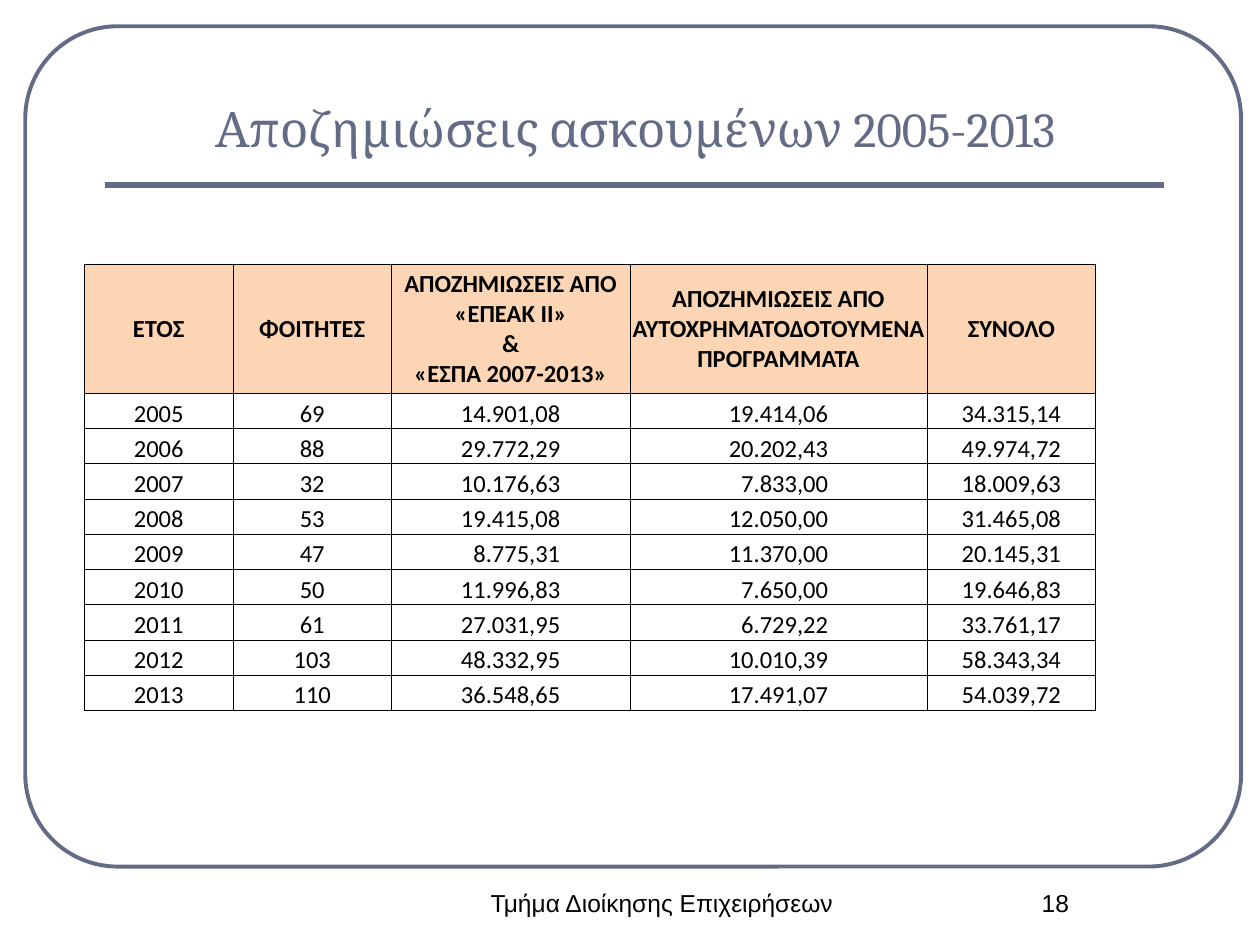
"""Build the slide on trainee compensation for 2005-2013."""
from dataclasses import dataclass

from lxml.etree import SubElement
from pptx import Presentation
from pptx.dml.color import RGBColor
from pptx.enum.shapes import MSO_CONNECTOR, MSO_SHAPE
from pptx.enum.text import MSO_ANCHOR, PP_ALIGN
from pptx.oxml import parse_xml
from pptx.oxml.ns import nsdecls, qn
from pptx.util import Cm, Pt


@dataclass(frozen=True)
class Theme:
    """Colours, fonts and type sizes of the slide."""
    accent: str = "646B86"
    ink: str = "000000"
    header: str = "FCD5B4"
    title_font: str = "Cambria"
    table_font: str = "Calibri"
    footer_font: str = "Arial"
    title_size: int = 28
    body_size: int = 14


THEME = Theme()
HEADERS = [
    ["ΕΤΟΣ"],
    ["ΦΟΙΤΗΤΕΣ"],
    ["ΑΠΟΖΗΜΙΩΣΕΙΣ ΑΠΟ «ΕΠΕΑΚ ΙΙ»", "&", "«ΕΣΠΑ 2007-2013»"],
    ["ΑΠΟΖΗΜΙΩΣΕΙΣ ΑΠΟ ΑΥΤΟΧΡΗΜΑΤΟΔΟΤΟΥΜΕΝΑ ΠΡΟΓΡΑΜΜΑΤΑ"],
    ["ΣΥΝΟΛΟ"],
]
ROWS = [
    ("2005", "69", "14.901,08", "19.414,06", "34.315,14"),
    ("2006", "88", "29.772,29", "20.202,43", "49.974,72"),
    ("2007", "32", "10.176,63", "7.833,00", "18.009,63"),
    ("2008", "53", "19.415,08", "12.050,00", "31.465,08"),
    ("2009", "47", "8.775,31", "11.370,00", "20.145,31"),
    ("2010", "50", "11.996,83", "7.650,00", "19.646,83"),
    ("2011", "61", "27.031,95", "6.729,22", "33.761,17"),
    ("2012", "103", "48.332,95", "10.010,39", "58.343,34"),
    ("2013", "110", "36.548,65", "17.491,07", "54.039,72"),
]
COL_WIDTHS = [3, 3.19, 4.81, 5.99, 3.4]
HEADER_HEIGHT, ROW_HEIGHT = 2.6, 0.71
DIGIT_WIDTH = 0.25


def write(tf, lines, font, size, color, bold=False):
    """Fill a text frame with centred paragraphs."""
    for i, line in enumerate(lines):
        p = tf.paragraphs[0] if i == 0 else tf.add_paragraph()
        p.alignment = PP_ALIGN.CENTER
        r = p.add_run()
        r.text = line
        r.font.name = font
        r.font.size = Pt(size)
        r.font.bold = bold
        r.font.color.rgb = RGBColor.from_string(color)


def add_text(s, text, left, top, width, height, font, size, color, anchor=MSO_ANCHOR.TOP):
    """Add a wrapped text box."""
    tf = s.shapes.add_textbox(Cm(left), Cm(top), Cm(width), Cm(height)).text_frame
    tf.word_wrap = True
    tf.vertical_anchor = anchor
    write(tf, [text], font, size, color)


def add_frame(s):
    """Add the rounded outline around the content."""
    sp = s.shapes.add_shape(MSO_SHAPE.ROUNDED_RECTANGLE, Cm(0.51), Cm(0.53), Cm(24.51), Cm(16.94))
    sp.adjustments[0] = 0.11
    sp.shadow.inherit = False
    sp.fill.background()
    sp.line.color.rgb = RGBColor.from_string(THEME.accent)
    sp.line.width = Pt(2.25)


def add_rule(s):
    """Add the line under the title."""
    sp = s.shapes.add_connector(MSO_CONNECTOR.STRAIGHT, Cm(2.11), Cm(3.73), Cm(23.47), Cm(3.73))
    sp.line.color.rgb = RGBColor.from_string(THEME.accent)
    sp.line.width = Pt(3)
    SubElement(sp._element.spPr, qn("a:effectLst"))


def add_borders(cell):
    """Draw a thin line on all four sides of a cell."""
    tcPr = cell._tc.get_or_add_tcPr()
    for i, side in enumerate(("lnL", "lnR", "lnT", "lnB")):
        tcPr.insert(i, parse_xml(
            f'<a:{side} {nsdecls("a")} w="{Pt(0.5)}"><a:solidFill>'
            f'<a:srgbClr val="{THEME.ink}"/></a:solidFill></a:{side}>'))


def fill_cell(cell, lines, header):
    """Write and style one table cell."""
    cell.margin_left = cell.margin_right = cell.margin_top = cell.margin_bottom = 0
    cell.vertical_anchor = MSO_ANCHOR.MIDDLE if header else MSO_ANCHOR.BOTTOM
    if header:
        cell.fill.solid()
        cell.fill.fore_color.rgb = RGBColor.from_string(THEME.header)
    else:
        cell.fill.background()
        if "," in lines[0] and len(lines[0]) < len("00.000,00"):
            cell.margin_left = Cm(DIGIT_WIDTH)
    write(cell.text_frame, lines, THEME.table_font, THEME.body_size, THEME.ink, header)
    add_borders(cell)


def add_compensation_table(s):
    """Add the table of yearly compensation."""
    height = HEADER_HEIGHT + ROW_HEIGHT * len(ROWS)
    table = s.shapes.add_table(len(ROWS) + 1, len(HEADERS), Cm(1.7), Cm(5.33),
                               Cm(sum(COL_WIDTHS)), Cm(height)).table
    table.first_row = table.horz_banding = False
    for col, width in zip(table.columns, COL_WIDTHS):
        col.width = Cm(width)
    grid = [HEADERS] + [[[value] for value in row] for row in ROWS]
    for i, (row, contents) in enumerate(zip(table.rows, grid)):
        row.height = Cm(ROW_HEIGHT if i else HEADER_HEIGHT)
        for cell, lines in zip(row.cells, contents):
            fill_cell(cell, lines, i == 0)


def main():
    """Build and save the slide."""
    prs = Presentation()
    prs.slide_width, prs.slide_height = Cm(25.4), Cm(19.05)
    s = prs.slides.add_slide(prs.slide_layouts[6])
    add_frame(s)
    add_rule(s)
    add_text(s, "Αποζημιώσεις ασκουμένων 2005-2013", 2.11, 0.91, 21.39, 2.39,
             THEME.title_font, THEME.title_size, THEME.accent, MSO_ANCHOR.BOTTOM)
    for text, left, width in (("Τμήμα Διοίκησης Επιχειρήσεων", 9.32, 8.05), ("18", 19.05, 4.45)):
        add_text(s, text, left, 17.78, width, 1.27, THEME.footer_font, THEME.body_size, THEME.ink)
    add_compensation_table(s)
    prs.save("out.pptx")


if __name__ == "__main__":
    main()
